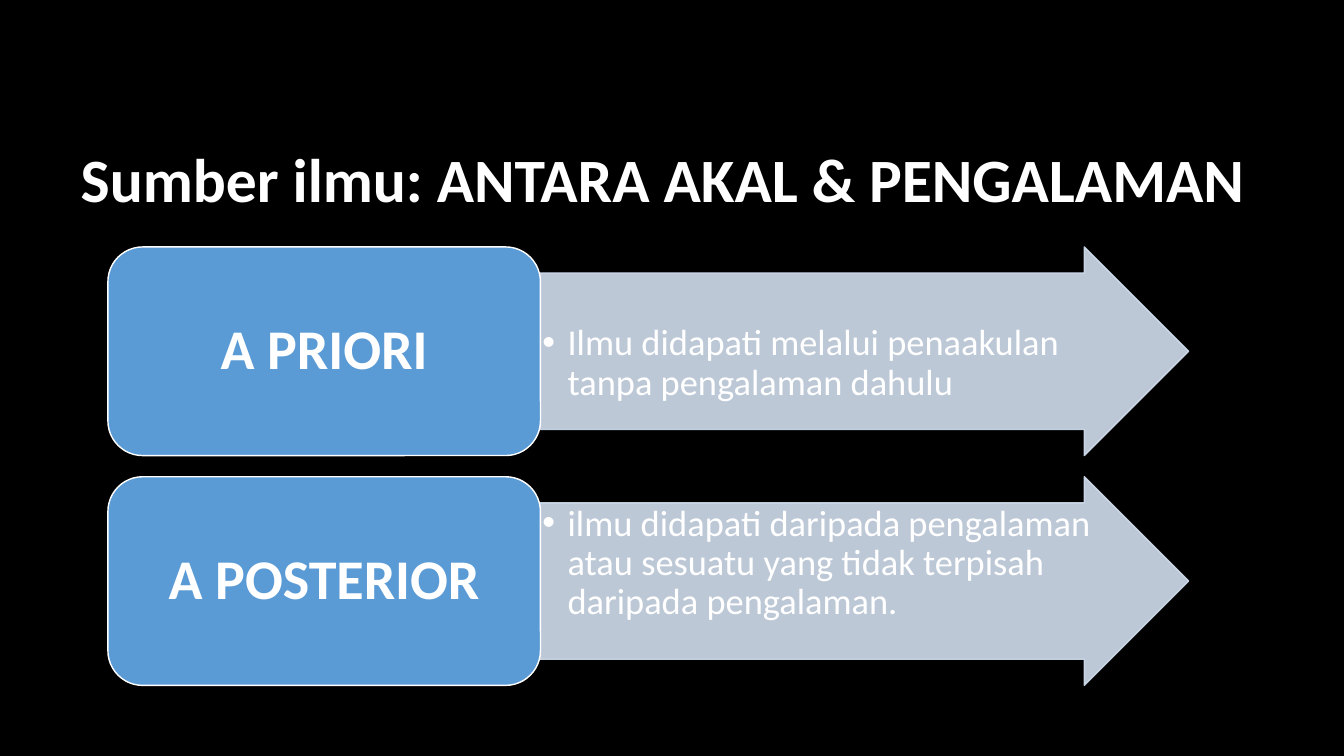
import pptx
import pptx.util
import pptx.dml.color
import pptx.enum.shapes
import pptx.enum.text
import pptx.oxml
import pptx.oxml.ns

Inches = pptx.util.Inches
Kind = pptx.enum.shapes.MSO_SHAPE
Align = pptx.enum.text.PP_ALIGN
Anchor = pptx.enum.text.MSO_ANCHOR
space = pptx.oxml.ns.nsdecls("a")


def paint(form, color):
    """Give a fill or font colour format the hex colour."""
    form.rgb = pptx.dml.color.RGBColor.from_string(color)


def write(shape, text, size, bold, align, anchor, pads):
    """Set the text; pads are left, top, right and bottom in inches."""
    frame = shape.text_frame
    frame.text = text
    sides = ("margin_left", "margin_top", "margin_right", "margin_bottom")
    looks = dict(zip(sides, map(Inches, pads)))
    looks.update(word_wrap=True, vertical_anchor=anchor,
                 auto_size=pptx.enum.text.MSO_AUTO_SIZE.NONE)
    for name, value in looks.items():
        setattr(frame, name, value)
    para = frame.paragraphs[0]
    para.alignment = align
    para.line_spacing = 0.9
    font = para.runs[0].font
    for name, value in dict(name="Calibri", size=pptx.util.Pt(size), bold=bold).items():
        setattr(font, name, value)
    paint(font.color, "FFFFFF")
    return para


deck = pptx.Presentation()
deck.slide_width = Inches(13.33)
deck.slide_height = Inches(7.5)
slide = deck.slides.add_slide(deck.slide_layouts[5])
slide.background.fill.solid()
paint(slide.background.fill.fore_color, "000000")

title = slide.shapes.title
place = dict(left=0.56, top=1.36, width=12.04, height=0.9)
for name, value in place.items():
    setattr(title, name, Inches(value))
write(title, "Sumber ilmu: ANTARA AKAL & PENGALAMAN", 44, True,
      Align.CENTER, Anchor.MIDDLE, (0.1, 0.05, 0.1, 0.05))

# Label, meaning and the space above the meaning
rows = [
    ("A PRIORI", "Ilmu didapati melalui penaakulan tanpa pengalaman dahulu", 0.51),
    ("A POSTERIOR", "ilmu didapati daripada pengalaman atau sesuatu yang tidak "
                    "terpisah daripada pengalaman.", 0.02),
]
left, top, high, step = 1.07, 2.45, 2.07, 2.28
wide, long = 4.29, 6.43

for row, (label, meaning, above) in enumerate(rows):
    y = top + row * step
    arrow = slide.shapes.add_shape(Kind.RIGHT_ARROW, Inches(left + wide), Inches(y),
                                   Inches(long), Inches(high))
    arrow.adjustments[0] = 0.75
    note = slide.shapes.add_textbox(Inches(left + wide), Inches(y + high / 8),
                                    Inches(5.66), Inches(high * 0.75))
    box = slide.shapes.add_shape(Kind.ROUNDED_RECTANGLE, Inches(left), Inches(y),
                                 Inches(wide), Inches(high))
    for shape, fill, edge in ((arrow, "D2DEEF", "D2DEEF"), (box, "5B9BD5", "FFFFFF")):
        shape.shadow.inherit = False
        shape.fill.solid()
        paint(shape.fill.fore_color, fill)
        paint(shape.line.color, edge)
        shape.line.width = pptx.util.Pt(1)

    for tint in arrow.element.spPr.iter(pptx.oxml.ns.qn("a:srgbClr")):
        tint.append(pptx.oxml.parse_xml(f'<a:alpha {space} val="90000"/>'))

    write(box, label, 40, True, Align.CENTER, Anchor.MIDDLE, (0.28, 0.18, 0.28, 0.18))
    para = write(note, meaning, 26, False, Align.LEFT, Anchor.TOP,
                 (0.02, above, 0.02, 0.02))
    props = para._p.get_or_add_pPr()
    props.set("marL", str(Inches(0.25)))
    props.set("indent", str(-Inches(0.25)))
    for mark in ('buFont {} typeface="Arial"', 'buChar {} char="•"'):
        props.append(pptx.oxml.parse_xml(f"<a:{mark.format(space)}/>"))

deck.save("out.pptx")
